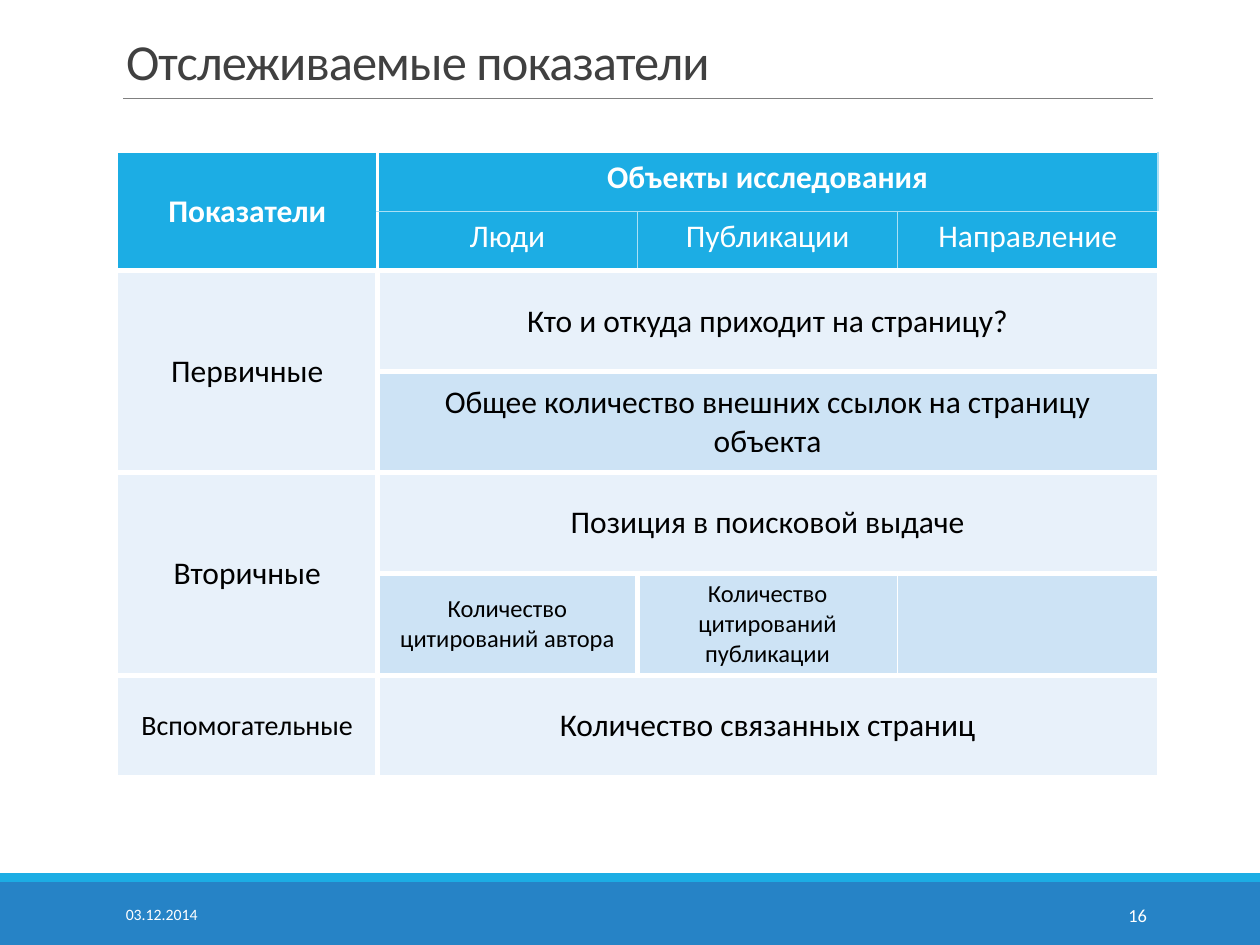
from lxml import etree
from pptx import Presentation
from pptx.dml.color import RGBColor
from pptx.enum import shapes, text
from pptx.oxml import ns
from pptx.util import Inches, Pt

WHITE = RGBColor(0xFF, 0xFF, 0xFF)
BLACK = RGBColor(0, 0, 0)
TITLE_GREY = RGBColor(0x40, 0x40, 0x40)
RULE_GREY = RGBColor(0x80, 0x80, 0x80)
CYAN = RGBColor(0x1C, 0xAD, 0xE4)
BLUE = RGBColor(0x26, 0x83, 0xC6)
PALE_CYAN = RGBColor(0xAA, 0xE0, 0xF5)
LIGHT_BAND = RGBColor(0xE8, 0xF1, 0xFA)
DARK_BAND = RGBColor(0xCD, 0xE3, 0xF5)

CENTER, RIGHT = text.PP_ALIGN.CENTER, text.PP_ALIGN.RIGHT
MIDDLE, TOP = text.MSO_ANCHOR.MIDDLE, text.MSO_ANCHOR.TOP


def write(frame, content, size=18, color=BLACK, bold=False, align=None,
          anchor=MIDDLE):
    frame.word_wrap = True
    frame.vertical_anchor = anchor
    paragraph = frame.paragraphs[0]
    paragraph.alignment = align
    run = paragraph.add_run()
    run.text = content
    run.font.name = "Calibri"
    run.font.size = Pt(size)
    run.font.bold = bold
    run.font.color.rgb = color
    return paragraph


def add_border(cell, side, width, color):
    line = etree.SubElement(cell._tc.get_or_add_tcPr(), ns.qn(f"a:ln{side}"),
                            w=str(Pt(width)))
    fill = etree.SubElement(line, ns.qn("a:solidFill"))
    etree.SubElement(fill, ns.qn("a:srgbClr"), val=str(color))


presentation = Presentation()
presentation.slide_width, presentation.slide_height = Inches(10), Inches(7.5)
slide = presentation.slides.add_slide(presentation.slide_layouts[5])

# Footer bars
for top, height, color in [(7, 0.5, BLUE), (6.93, 0.07, CYAN)]:
    bar = slide.shapes.add_shape(shapes.MSO_SHAPE.RECTANGLE, 0, Inches(top),
                                 Inches(10), Inches(height))
    bar.shadow.inherit = False
    bar.fill.solid()
    bar.fill.fore_color.rgb = color
    bar.line.fill.background()

# Title and the rule below it
title = slide.shapes.title
title.left, title.top = Inches(0.9), Inches(0.31)
title.width, title.height = Inches(8.25), Inches(0.46)
title.text_frame.auto_size = text.MSO_AUTO_SIZE.NONE
paragraph = write(title.text_frame, "Отслеживаемые показатели", size=28.8,
                  color=TITLE_GREY, align=text.PP_ALIGN.LEFT,
                  anchor=text.MSO_ANCHOR.BOTTOM)
paragraph.line_spacing = 0.85
paragraph.runs[0].font._element.set("spc", "-50")

rule = slide.shapes.add_connector(shapes.MSO_CONNECTOR.STRAIGHT, Inches(0.98),
                                  Inches(0.78), Inches(9.15), Inches(0.78))
rule.line.color.rgb = RULE_GREY
rule.line.width = Pt(0.5)
etree.SubElement(rule._element.spPr, ns.qn("a:effectLst"))

# Table grid
row_heights = [0.47] * 2 + [0.8] * 5
table = slide.shapes.add_table(7, 4, Inches(0.93), Inches(1.21), Inches(8.26),
                               Inches(sum(row_heights))).table
for column in table.columns:
    column.width = Inches(2.065)
for row, height in zip(table.rows, row_heights):
    row.height = Inches(height)

# Borders and fills: thick white lines, thin tinted ones inside the header
for r in range(7):
    for c in range(4):
        cell = table.cell(r, c)
        header = r < 2
        thin = (1, PALE_CYAN if header else WHITE)
        first = (2.25 if header else 3, WHITE)
        split = (3, WHITE) if r == 5 else thin
        verticals = [(1, WHITE), first, split, thin, (1, WHITE)]
        inner = (1, PALE_CYAN) if c else (3, WHITE)
        horizontals = [(1, WHITE), inner] + [(3, WHITE)] * 5 + [(1, WHITE)]
        add_border(cell, "L", *verticals[c])
        add_border(cell, "R", *verticals[c + 1])
        add_border(cell, "T", *horizontals[r])
        add_border(cell, "B", *horizontals[r + 1])
        cell.fill.solid()
        dark = r in (3, 5) and c > 0
        cell.fill.fore_color.rgb = (CYAN if header else
                                    DARK_BAND if dark else LIGHT_BAND)

# Table text: row, column, rows spanned, columns spanned, wording, format
heading = dict(color=WHITE, bold=True)
subheading = dict(color=WHITE, anchor=TOP)
entries = [
    (0, 0, 2, 1, "Показатели", heading),
    (0, 1, 1, 3, "Объекты исследования", dict(heading, anchor=TOP)),
    (1, 1, 1, 1, "Люди", subheading),
    (1, 2, 1, 1, "Публикации", subheading),
    (1, 3, 1, 1, "Направление", subheading),
    (2, 0, 2, 1, "Первичные", {}),
    (2, 1, 1, 3, "Кто и откуда приходит на страницу?", {}),
    (3, 1, 1, 3, "Общее количество внешних ссылок на страницу объекта", {}),
    (4, 0, 2, 1, "Вторичные", {}),
    (4, 1, 1, 3, "Позиция в поисковой выдаче", {}),
    (5, 1, 1, 1, "Количество цитирований автора", dict(size=14)),
    (5, 2, 1, 1, "Количество цитирований публикации", dict(size=14)),
    (6, 0, 1, 1, "Вспомогательные", dict(size=16)),
    (6, 1, 1, 3, "Количество связанных страниц", {}),
]
for r, c, row_span, column_span, wording, style in entries:
    cell = table.cell(r, c)
    if row_span * column_span > 1:
        cell.merge(table.cell(r + row_span - 1, c + column_span - 1))
    write(cell.text_frame, wording, align=CENTER, **style)
    cell.vertical_anchor = style.get("anchor", MIDDLE)

# Date and slide number
for left, width, wording, size, align in [
    (0.9, 2.03, "03.12.2014", 9, None),
    (8.12, 1.08, "16", 10.5, RIGHT),
]:
    box = slide.shapes.add_textbox(Inches(left), Inches(7.06), Inches(width),
                                   Inches(0.4))
    write(box.text_frame, wording, size=size, color=WHITE, align=align)

presentation.save("out.pptx")
